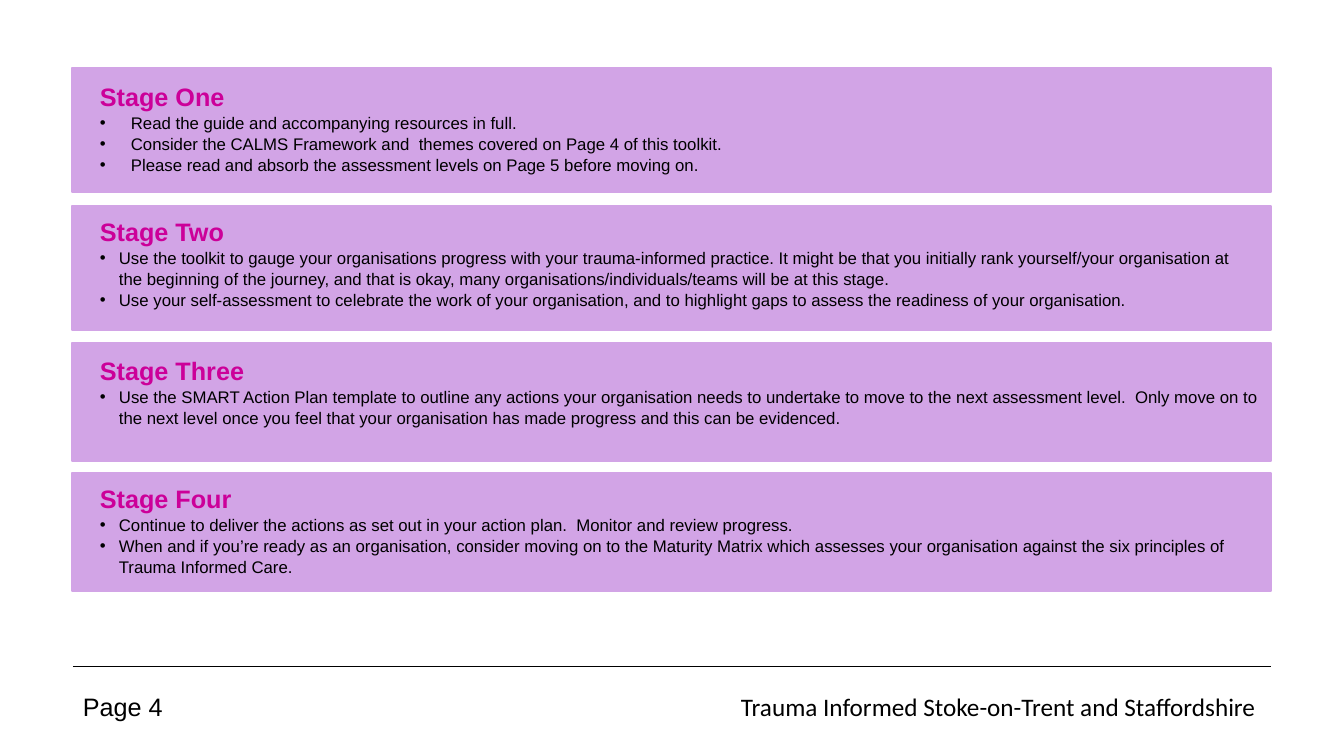
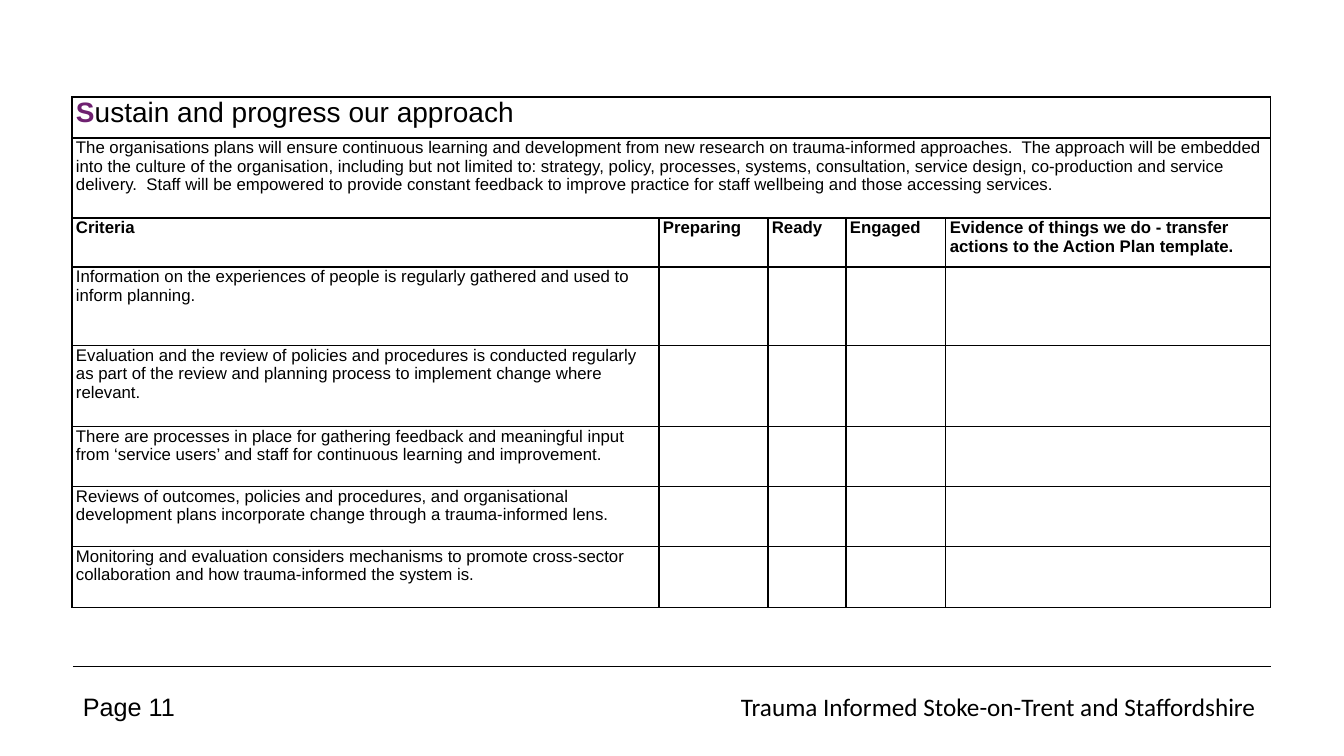
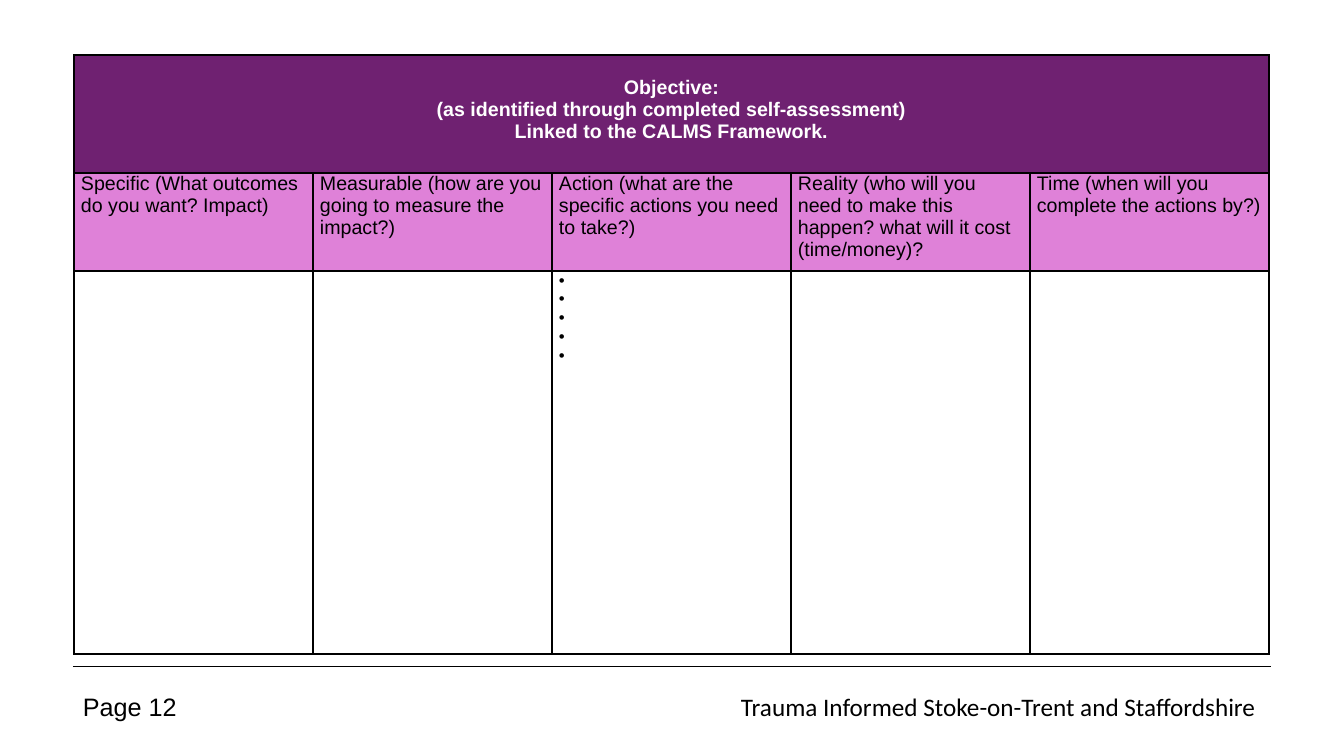
from lxml.etree import SubElement
from pptx import Presentation
from pptx.dml.color import RGBColor
from pptx.enum.shapes import MSO_CONNECTOR as Connector, MSO_SHAPE as Shape
from pptx.enum.text import MSO_ANCHOR as Anchor, PP_ALIGN as Align
from pptx.oxml import parse_xml
from pptx.oxml.ns import nsdecls, qn
from pptx.util import Emu, Pt

BLACK, WHITE = "000000", "FFFFFF"
LILAC, MAGENTA = "D2A4E6", "CC0099"
PURPLE, PINK = "6F2171", "DF81D8"
LEFT, RIGHT = 73, 1271


def px(length):
    return Emu(round(length * 914400 / 100.8))


def color(code):
    return RGBColor.from_string(code)


class Toolkit:
    """Holds the deck, its shared style and the current slide."""

    def __init__(self):
        self.deck = Presentation()
        self.deck.slide_width, self.deck.slide_height = px(1344), px(756)

    def start_page(self, number):
        self.page = self.deck.slides.add_slide(self.deck.slide_layouts[6])
        self.line(LEFT, 666, RIGHT, 666)
        self.add_text(self.box(LEFT, 686, 121, 40), f"Page {number}", 18)
        footer = self.box(729, 686, 542, 40)
        self.add_text(footer, "Trauma Informed Stoke-on-Trent and Staffordshire ", 18,
                      font="Calibri", align=Align.RIGHT)

    def line(self, x1, y1, x2, y2):
        rule = self.page.shapes.add_connector(
            Connector.STRAIGHT, px(x1), px(y1), px(x2), px(y2))
        rule.line.color.rgb = color(BLACK)
        rule.line.width = Pt(0.5)
        SubElement(rule._element.spPr, qn("a:effectLst"))

    def panel(self, x, y, width, height, fill):
        panel = self.page.shapes.add_shape(
            Shape.RECTANGLE, px(x), px(y), px(width), px(height))
        panel.shadow.inherit = False
        panel.fill.solid()
        panel.fill.fore_color.rgb = color(fill)
        panel.line.color.rgb = color(fill)
        panel.line.width = Pt(1)

    def box(self, x, y, width, height):
        frame = self.page.shapes.add_textbox(px(x), px(y), px(width), px(height)).text_frame
        frame.word_wrap = True
        return frame

    def add_text(self, frame, text, size, bold=False, ink=BLACK, font="Arial", align=Align.LEFT):
        first = frame.paragraphs[0]
        para = frame.add_paragraph() if first.runs else first
        para.alignment = align
        self.span(para, text, size, bold, ink, font)
        return para

    def span(self, para, text, size, bold=False, ink=BLACK, font="Arial"):
        span = para.add_run()
        span.text = text
        span.font.size, span.font.bold, span.font.name = Pt(size), bold, font
        span.font.color.rgb = color(ink)

    def bullet(self, para, indent):
        props = para._p.get_or_add_pPr()
        props.set("marL", str(px(indent)))
        props.set("indent", str(-px(indent)))
        SubElement(props, qn("a:buFont"), typeface="Arial")
        SubElement(props, qn("a:buChar"), char="•")

    def stage(self, y, height, text_y, text_width, indent, title, steps):
        self.panel(72, y, 1199, height, LILAC)
        frame = self.box(90, text_y, text_width, height)
        self.add_text(frame, title, 18, True, MAGENTA)
        for step in steps:
            self.bullet(self.add_text(frame, step, 12), indent)
        for para in frame.paragraphs:
            para.line_spacing = 1.05

    def table(self, x, y, widths, heights, inset):
        frame = self.page.shapes.add_table(
            len(heights), len(widths), px(x), px(y), px(sum(widths)), px(sum(heights)))
        table = frame.table
        table.first_row = table.horz_banding = False
        for column, width in zip(table.columns, widths):
            column.width = px(width)
        for row, height in zip(table.rows, heights):
            row.height = px(height)
        for cell in table.iter_cells():
            cell.margin_left = cell.margin_right = px(inset)
            cell.margin_top = cell.margin_bottom = 0
            cell.vertical_anchor = Anchor.TOP
            self.fill_cell(cell, WHITE)
            self.border(cell)
        return table

    def fill_cell(self, cell, fill):
        cell.fill.solid()
        cell.fill.fore_color.rgb = color(fill)

    def border(self, cell):
        props = cell._tc.get_or_add_tcPr()
        for place, side in enumerate("LRTB"):
            props.insert(place, parse_xml(
                f'<a:ln{side} {nsdecls("a")} w="{Pt(1)}"><a:solidFill>'
                f'<a:srgbClr val="{BLACK}"/></a:solidFill></a:ln{side}>'))

    def merge_row(self, table, row):
        cell = table.cell(row, 0)
        cell.merge(table.cell(row, len(table.columns) - 1))
        return cell


STAGES = [
    (68, 124, 75, 1158, 31, "Stage One", [
        "Read the guide and accompanying resources in full.",
        "Consider the CALMS Framework and  themes covered on Page 4 of this toolkit.",
        "Please read and absorb the assessment levels on Page 5 before moving on."]),
    (206, 124, 210, 1158, 19, "Stage Two", [
        "Use the toolkit to gauge your organisations progress with your trauma-informed practice. "
        "It might be that you initially rank yourself/your organisation at the beginning of the "
        "journey, and that is okay, many organisations/individuals/teams will be at this stage.",
        "Use your self-assessment to celebrate the work of your organisation, and to highlight "
        "gaps to assess the readiness of your organisation."]),
    (343, 118, 349, 1194, 19, "Stage Three", [
        "Use the SMART Action Plan template to outline any actions your organisation needs to "
        "undertake to move to the next assessment level.  Only move on to the next level once "
        "you feel that your organisation has made progress and this can be evidenced."]),
    (473, 118, 477, 1158, 19, "Stage Four", [
        "Continue to deliver the actions as set out in your action plan.  "
        "Monitor and review progress.",
        "When and if you’re ready as an organisation, consider moving on to the Maturity Matrix "
        "which assesses your organisation against the six principles of Trauma Informed Care."]),
]

SUSTAIN_AIM = (
    "The organisations plans will ensure continuous learning and development from new research "
    "on trauma-informed approaches.  The approach will be embedded into the culture of the "
    "organisation, including but not limited to: strategy, policy, processes, systems, "
    "consultation, service design, co-production and service delivery.  Staff will be empowered "
    "to provide constant feedback to improve practice for staff wellbeing and those accessing "
    "services.")

HEADINGS = ["Criteria", "Preparing", "Ready", "Engaged",
            "Evidence of things we do - transfer actions to the Action Plan template."]

CRITERIA = [
    "Information on the experiences of people is regularly gathered and used to inform planning.",
    "Evaluation and the review of policies and procedures is conducted regularly as part of the "
    "review and planning process to implement change where relevant.",
    "There are processes in place for gathering feedback and meaningful input from "
    "‘service users’ and staff for continuous learning and improvement.",
    "Reviews of outcomes, policies and procedures, and organisational development plans "
    "incorporate change through a trauma-informed lens.",
    "Monitoring and evaluation considers mechanisms to promote cross-sector collaboration and "
    "how trauma-informed the system is.",
]

OBJECTIVE = ["Objective:", "(as identified through completed self-assessment)",
             "Linked to the CALMS Framework."]

SMART = [
    "Specific (What outcomes do you want? Impact)",
    "Measurable (how are you going to measure the impact?)",
    "Action (what are the specific actions you need to take?)",
    "Reality (who will you need to make this happen? what will it cost (time/money)?",
    "Time (when will you complete the actions by?)",
]


def build_stages(kit):
    kit.start_page(4)
    for stage in STAGES:
        kit.stage(*stage)


def build_criteria(kit):
    kit.start_page(11)
    table = kit.table(72, 97, [587, 109, 78, 100, 325],
                      [41, 80, 49, 79, 81, 60, 60, 61], 4)
    title = kit.merge_row(table, 0).text_frame
    para = kit.add_text(title, "S", 20, True, PURPLE)
    kit.span(para, "ustain and progress our approach", 20)
    kit.add_text(kit.merge_row(table, 1).text_frame, SUSTAIN_AIM, 12)
    for column, heading in enumerate(HEADINGS):
        kit.add_text(table.cell(2, column).text_frame, heading, 12, True)
    for row, criterion in enumerate(CRITERIA, 3):
        kit.add_text(table.cell(row, 0).text_frame, criterion, 12)


def build_action_plan(kit):
    kit.start_page(12)
    table = kit.table(74, 55, [239] * 5, [118, 98, 383], 7)
    objective = kit.merge_row(table, 0)
    objective.margin_top = px(22)
    kit.fill_cell(objective, PURPLE)
    for text in OBJECTIVE:
        kit.add_text(objective.text_frame, text, 14, True, WHITE, align=Align.CENTER)
    for column, prompt in enumerate(SMART):
        cell = table.cell(1, column)
        kit.fill_cell(cell, PINK)
        kit.add_text(cell.text_frame, prompt, 14)
    for _ in range(5):
        kit.bullet(kit.add_text(table.cell(2, 2).text_frame, " ", 12), 19)


def main():
    kit = Toolkit()
    build_stages(kit)
    build_criteria(kit)
    build_action_plan(kit)
    kit.deck.save("out.pptx")


if __name__ == "__main__":
    main()
